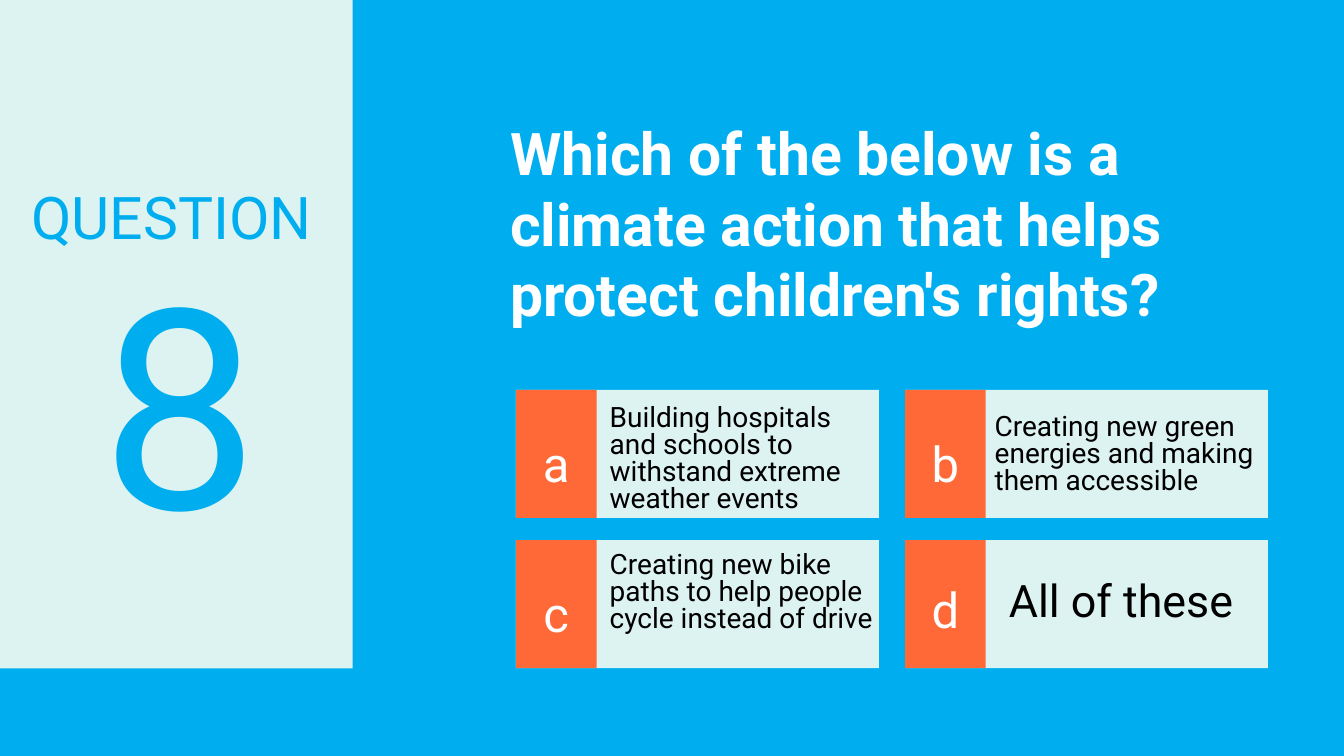
import pptx
import pptx.dml.color
import pptx.enum.shapes
import pptx.enum.text
import pptx.util

Pt = pptx.util.Pt
RGBColor = pptx.dml.color.RGBColor
ALIGN = pptx.enum.text.PP_ALIGN
ANCHOR = pptx.enum.text.MSO_ANCHOR

BLUE = RGBColor(0x00, 0xAE, 0xEF)
MINT = RGBColor(0xDD, 0xF3, 0xF1)
ORANGE = RGBColor(0xFF, 0x69, 0x37)
WHITE = RGBColor(0xFF, 0xFF, 0xFF)
BLACK = RGBColor(0x00, 0x00, 0x00)

ANSWERS = [
    ("a", "Building hospitals and schools to withstand extreme weather events",
     {"size": 20, "spacing": 0.8, "box": (59.8, 4.3, 202.3, 92.2), "letter_top": 17.3}),
    ("b", "Creating new green energies and making them accessible",
     {"size": 20, "spacing": 0.8, "box": (56.9, 10.8, 202.3, 72.7), "letter_top": 17.3}),
    ("c", "Creating new bike paths to help people cycle instead of drive",
     {"size": 20, "spacing": 0.8, "box": (59.8, 2.2, 202.3, 92.2), "letter_top": 17.3}),
    ("d", "All of these",
     {"size": 32, "spacing": 0.7, "box": (67, 26.6, 187.9, 41.8), "letter_top": 14.4}),
]


def set_values(target, values):
    """Set attributes of an object from a dict."""
    for name, value in values.items():
        setattr(target, name, value)


def place(shape, box):
    """Move and size a shape to a box in points."""
    set_values(shape, dict(zip(("left", "top", "width", "height"), map(Pt, box))))


def write_text(shape, text, size, color, inset, spacing=1.0, align=ALIGN.LEFT,
               anchor=ANCHOR.TOP, bold=False):
    """Fill a shape with one formatted paragraph."""
    frame = shape.text_frame
    frame.text = text
    margins = dict.fromkeys(
        ("margin_left", "margin_top", "margin_right", "margin_bottom"), Pt(inset))
    set_values(frame, {"word_wrap": True, "vertical_anchor": anchor,
                       "auto_size": pptx.enum.text.MSO_AUTO_SIZE.NONE, **margins})
    paragraph = frame.paragraphs[0]
    set_values(paragraph, {"alignment": align, "line_spacing": spacing})
    font = paragraph.runs[0].font
    set_values(font, {"name": "Roboto", "size": Pt(size), "bold": bold})
    font.color.rgb = color


def add_text(slide, box, text, **formats):
    """Add a text box with one formatted paragraph."""
    write_text(slide.shapes.add_textbox(*map(Pt, box)), text, **formats)


def add_rectangle(slide, box, color):
    """Add a plain filled rectangle."""
    shape = slide.shapes.add_shape(
        pptx.enum.shapes.MSO_SHAPE.RECTANGLE, *map(Pt, box))
    shape.shadow.inherit = False
    shape.fill.solid()
    shape.fill.fore_color.rgb = color
    shape.line.fill.background()


def add_number_panel(slide, box, label, number):
    """Draw the side panel with the slide title and question number."""
    left, top, width, height = box
    add_rectangle(slide, box, MINT)
    title = slide.shapes.title
    slide.shapes._spTree.append(title._element)
    place(title, (left + 18.7, top + 121, 240.5, 72.7))
    formats = {"color": BLUE, "inset": 3.6, "spacing": 0.9, "anchor": ANCHOR.MIDDLE}
    write_text(title, label, size=42, **formats)
    add_text(slide, (left + 18.7, top + 186.5, 219.6, 224.6), number,
             size=200, align=ALIGN.CENTER, **formats)


def add_answer(slide, box, letter, answer, layout):
    """Draw an answer card with its lettered tab."""
    left, top, width, height = box
    tab_width = 57.6
    add_rectangle(slide, box, MINT)
    add_rectangle(slide, (left, top, tab_width, height), ORANGE)
    add_text(slide, (left, top + layout["letter_top"], tab_width, 56.9), letter,
             size=35, color=WHITE, inset=7.2, spacing=1.15, align=ALIGN.CENTER)
    text_left, text_top, text_width, text_height = layout["box"]
    add_text(slide, (left + text_left, top + text_top, text_width, text_height), answer,
             size=layout["size"], color=BLACK, inset=7.2, spacing=layout["spacing"])


def add_answer_grid(slide, box):
    """Lay out the answers in two rows of two cards."""
    left, top, width, height = box
    card_width, card_height = 259.2, 91.4
    for index, (letter, answer, layout) in enumerate(ANSWERS):
        row, column = divmod(index, 2)
        card = (left + column * (width - card_width),
                top + row * (height - card_height), card_width, card_height)
        add_answer(slide, card, letter, answer, layout)


def add_question_slide(presentation):
    """Build the quiz question slide."""
    slide = presentation.slides.add_slide(presentation.slide_layouts[5])
    slide.background.fill.solid()
    slide.background.fill.fore_color.rgb = BLUE
    add_number_panel(slide, (0, 0, 252, 477.4), "QUESTION", "8")
    add_text(slide, (358.6, 77.8, 538.6, 170.6),
             "Which of the below is a climate action that helps protect children's rights?",
             size=42, color=WHITE, inset=5.8, bold=True)
    add_answer_grid(slide, (368.6, 278.6, 537.1, 198.7))


def main():
    """Create and save the presentation."""
    presentation = pptx.Presentation()
    set_values(presentation, {"slide_width": Pt(960), "slide_height": Pt(540)})
    add_question_slide(presentation)
    presentation.save("out.pptx")


if __name__ == "__main__":
    main()
